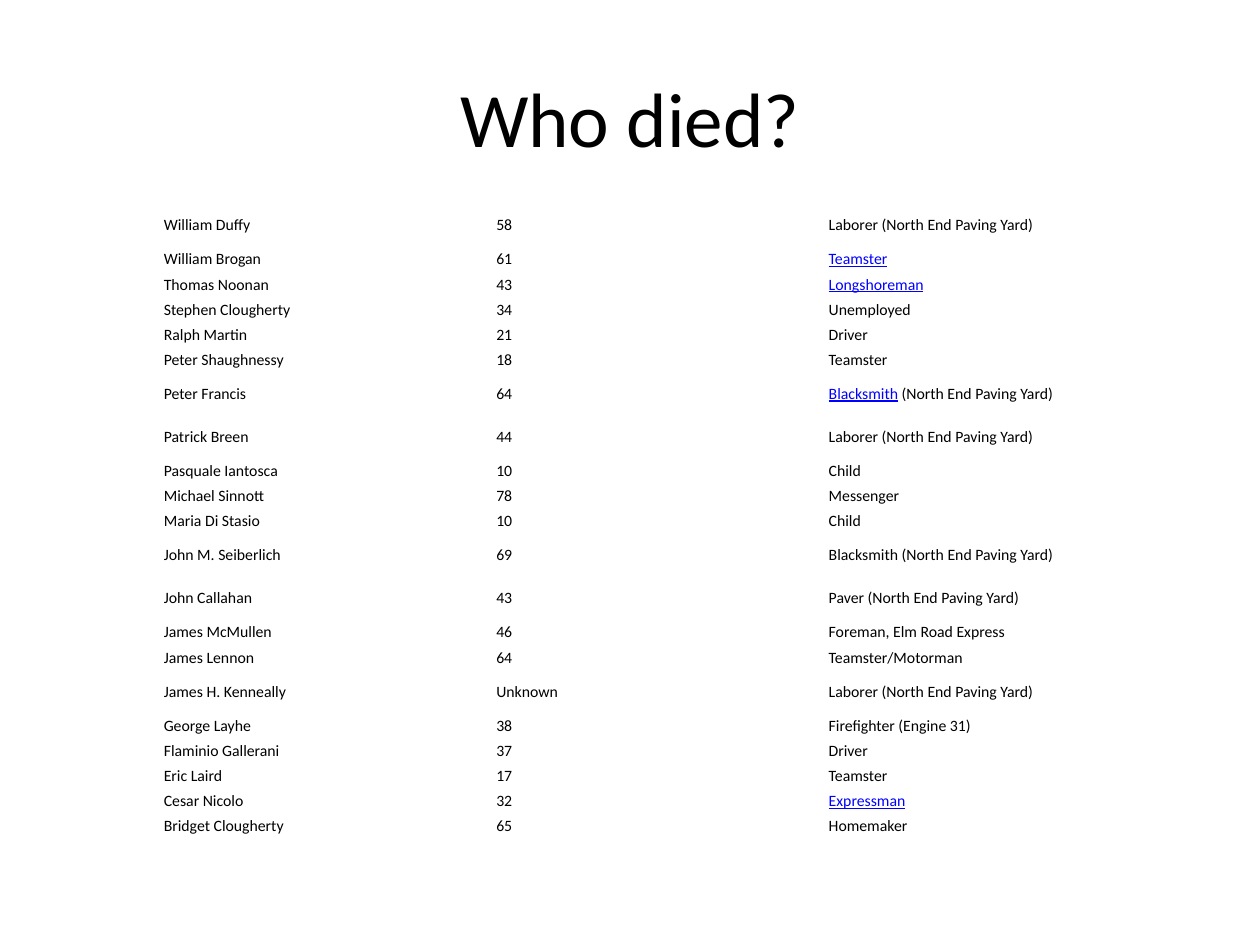
"""Build a slide with a table of the people who died, their ages and occupations."""
from pptx import Presentation
from pptx.dml.color import RGBColor
from pptx.enum import text
from pptx.util import Pt

COLORS = {"text": "000000", "link": "0000FF"}
YARD = "(North End Paving Yard)"
LINKED_ROWS = {"William Brogan", "Thomas Noonan", "Peter Francis", "Cesar Nicolo"}
PEOPLE = [
    ("William Duffy", "58", f"Laborer {YARD}"),
    ("William Brogan", "61", "Teamster"),
    ("Thomas Noonan", "43", "Longshoreman"),
    ("Stephen Clougherty", "34", "Unemployed"),
    ("Ralph Martin", "21", "Driver"),
    ("Peter Shaughnessy", "18", "Teamster"),
    ("Peter Francis", "64", f"Blacksmith {YARD}"),
    ("Patrick Breen", "44", f"Laborer {YARD}"),
    ("Pasquale Iantosca", "10", "Child"),
    ("Michael Sinnott", "78", "Messenger"),
    ("Maria Di Stasio", "10", "Child"),
    ("John M. Seiberlich", "69", f"Blacksmith {YARD}"),
    ("John Callahan", "43", f"Paver {YARD}"),
    ("James McMullen", "46", "Foreman, Elm Road Express"),
    ("James Lennon", "64", "Teamster/Motorman"),
    ("James H. Kenneally", "Unknown", f"Laborer {YARD}"),
    ("George Layhe", "38", "Firefighter (Engine 31)"),
    ("Flaminio Gallerani", "37", "Driver"),
    ("Eric Laird", "17", "Teamster"),
    ("Cesar Nicolo", "32", "Expressman"),
    ("Bridget Clougherty", "65", "Homemaker"),
]
SHORT_ROW, TALL_ROW, COLUMN = 14.4, 24.5, 190


def add_span(para, words, size=9, color="text", underline=False):
    span = para.add_run()
    span.text = words
    span.font.name = "Calibri"
    span.font.size = Pt(size)
    span.font.underline = underline
    span.font.color.rgb = RGBColor.from_string(COLORS[color])


deck = Presentation()
deck.slide_width, deck.slide_height = Pt(720), Pt(540)
page = deck.slides.add_slide(deck.slide_layouts[5])

title = page.shapes.title
title.left, title.top, title.width, title.height = Pt(36), Pt(21.6), Pt(648), Pt(90)
title.text_frame.vertical_anchor = text.MSO_ANCHOR.MIDDLE
heading = title.text_frame.paragraphs[0]
heading.alignment = text.PP_ALIGN.CENTER
add_span(heading, "Who died?", size=44)

heights = [TALL_ROW if job.endswith(YARD) else SHORT_ROW for name, age, job in PEOPLE]
frame = page.shapes.add_table(
    len(PEOPLE), 3, Pt(90), Pt(116.6), Pt(3 * COLUMN), Pt(sum(heights)))
table = frame.table
table.first_row = table.horz_banding = False
for column in table.columns:
    column.width = Pt(COLUMN)

for row, height, person in zip(table.rows, heights, PEOPLE):
    row.height = Pt(height)
    for index, (cell, words) in enumerate(zip(row.cells, person)):
        cell.fill.background()
        cell.vertical_anchor = text.MSO_ANCHOR.MIDDLE
        cell.margin_left = cell.margin_right = Pt(3.6)
        cell.margin_top = cell.margin_bottom = Pt(1.6)
        para = cell.text_frame.paragraphs[0]
        if index == 2 and person[0] in LINKED_ROWS:
            job, space, place = words.partition(" ")
            add_span(para, job, color="link", underline=True)
            words = space + place
        if words:
            add_span(para, words)

deck.save("out.pptx")
